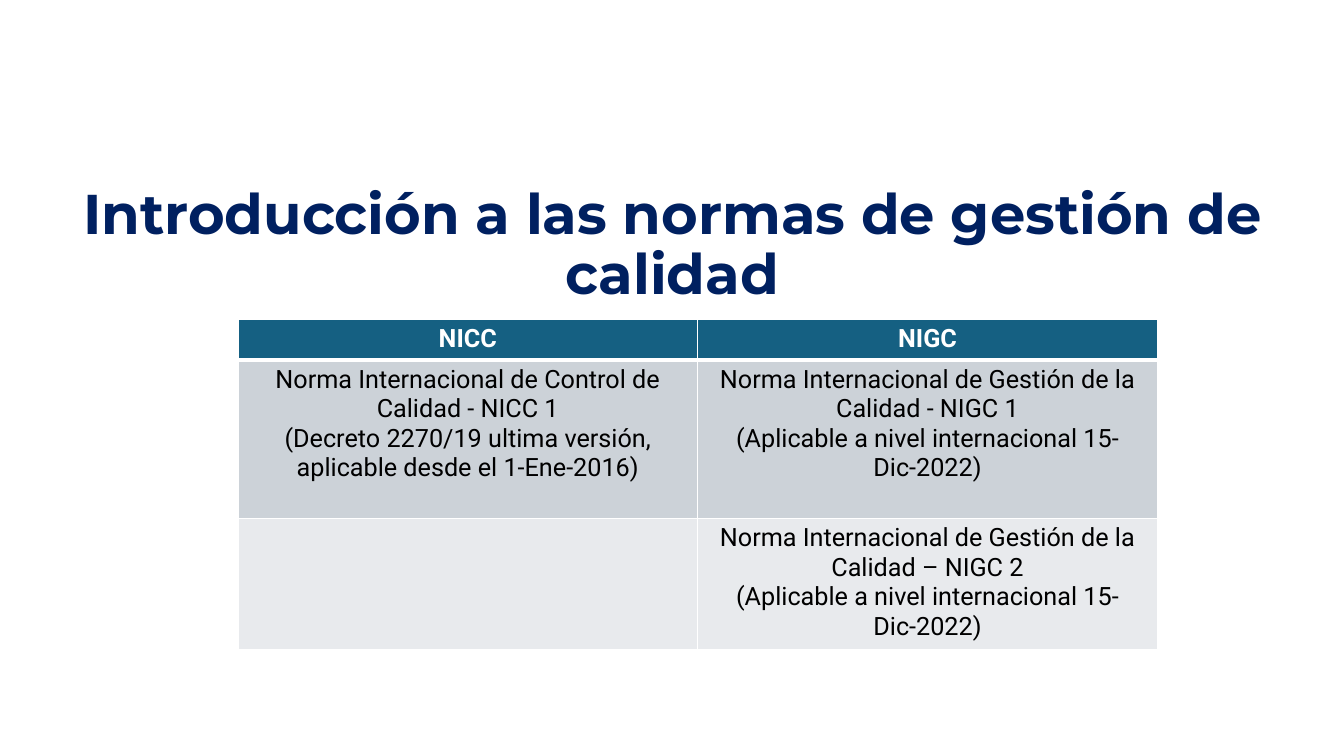
from lxml.etree import SubElement
from pptx import Presentation
from pptx.dml.color import RGBColor
from pptx.enum.text import MSO_ANCHOR, PP_ALIGN
from pptx.oxml.ns import qn
from pptx.util import Inches, Pt

NAVY, TEAL, WHITE, BLACK = "002060", "156082", "FFFFFF", "000000"
BODY_FILLS = ["CCD2D8", "E8EAED"]
APPLICABLE = "(Aplicable a nivel internacional 15-Dic-2022)"
STANDARDS = [
    [["NICC"], ["NIGC"]],
    [
        [
            "Norma Internacional de Control de Calidad - NICC 1",
            "(Decreto 2270/19 ultima versión, aplicable desde el 1-Ene-2016)",
        ],
        ["Norma Internacional de Gestión de la Calidad - NIGC 1", APPLICABLE],
    ],
    [[], ["Norma Internacional de Gestión de la Calidad – NIGC 2", APPLICABLE]],
]


def color(value):
    return RGBColor.from_string(value)


class SlideBuilder:
    title_font = "Montserrat"
    body_font = "Roboto"
    title_size = 40
    body_size = 18

    def __init__(self, presentation):
        self.width = presentation.slide_width
        self.height = presentation.slide_height
        self.slide = presentation.slides.add_slide(presentation.slide_layouts[6])

    def place(self, left, top, width, height):
        return (
            round(left * self.width),
            round(top * self.height),
            round(width * self.width),
            round(height * self.height),
        )

    def fill_text(self, frame, lines, font_name, size, font_color, bold):
        for index, line in enumerate(lines):
            paragraph = frame.add_paragraph() if index else frame.paragraphs[0]
            paragraph.text = line
            paragraph.alignment = PP_ALIGN.CENTER
            font = paragraph.font
            font.name = font_name
            font.size = Pt(size)
            font.bold = bold
            font.color.rgb = color(font_color)

    def title(self, text, *area):
        frame = self.slide.shapes.add_textbox(*self.place(*area)).text_frame
        frame.word_wrap = True
        frame.vertical_anchor = MSO_ANCHOR.MIDDLE
        self.fill_text(frame, [text], self.title_font, self.title_size, NAVY, True)
        frame.paragraphs[0].line_spacing = 0.9

    def border(self, cell, top, bottom):
        properties = cell._tc.get_or_add_tcPr()
        widths = {"a:lnL": 1, "a:lnR": 1, "a:lnT": top, "a:lnB": bottom}
        for index, (side, width) in enumerate(widths.items()):
            line = SubElement(properties, qn(side), w=str(Pt(width)))
            fill = SubElement(line, qn("a:solidFill"))
            SubElement(fill, qn("a:srgbClr"), val=WHITE)
            properties.insert(index, line)

    def table(self, rows, row_shares, left, top, width):
        area = self.place(left, top, width, sum(row_shares))
        table = self.slide.shapes.add_table(len(rows), len(rows[0]), *area).table
        table.horz_banding = False
        for row_index, row in enumerate(rows):
            table.rows[row_index].height = round(row_shares[row_index] * self.height)
            header = row_index == 0
            cell_fill = TEAL if header else BODY_FILLS[row_index - 1]
            for column_index, lines in enumerate(row):
                cell = table.cell(row_index, column_index)
                cell.fill.solid()
                cell.fill.fore_color.rgb = color(cell_fill)
                self.border(cell, 3 if row_index == 1 else 1, 3 if header else 1)
                self.fill_text(
                    cell.text_frame, lines, self.body_font, self.body_size,
                    WHITE if header else BLACK, header,
                )


def main():
    presentation = Presentation()
    presentation.slide_width = Inches(13.33)
    presentation.slide_height = Inches(7.5)
    builder = SlideBuilder(presentation)
    builder.title(
        "Introducción a las normas de gestión de calidad",
        0.53 / 13.33, 1.72 / 7.5, 12.28 / 13.33, 1.45 / 7.5,
    )
    row_shares = [height / 7.5 for height in (0.4, 1.57, 1.27)]
    builder.table(STANDARDS, row_shares, 2.36 / 13.33, 3.17 / 7.5, 9.12 / 13.33)
    presentation.save("out.pptx")


if __name__ == "__main__":
    main()
